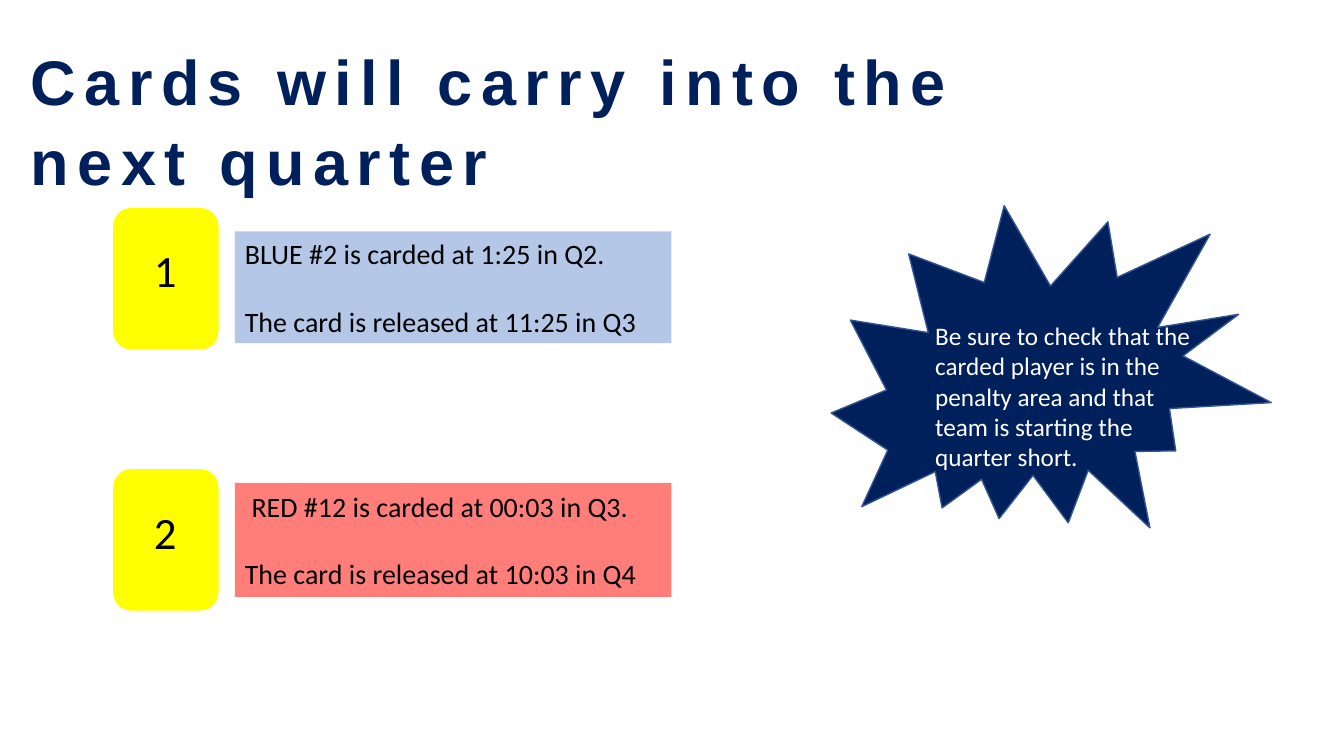
from pptx import Presentation
from pptx.dml.color import RGBColor
from pptx.enum.shapes import MSO_SHAPE
from pptx.enum.text import MSO_ANCHOR, PP_ALIGN
from pptx.util import Cm, Pt

ROUNDED, RECTANGLE = MSO_SHAPE.ROUNDED_RECTANGLE, MSO_SHAPE.RECTANGLE
BURST = MSO_SHAPE.EXPLOSION2
MIDDLE, LEFT = MSO_ANCHOR.MIDDLE, PP_ALIGN.LEFT
NAVY, YELLOW = "00205B", "FFFF00"


def add_filled(shapes, preset, box, fill, line=None):
    shape = shapes.add_shape(preset, *map(Cm, box))
    shape.shadow.inherit = False
    shape.fill.solid()
    shape.fill.fore_color.rgb = RGBColor.from_string(fill)
    if line:
        shape.line.color.rgb = RGBColor.from_string(line)
        shape.line.width = Pt(1)
    else:
        shape.line.fill.background()
    return shape


def write(shape, text, size, color="000000", font="Calibri", wrap=True):
    """Fill a shape with left-aligned text, one paragraph per line."""
    frame = shape.text_frame
    frame.text = text
    frame.word_wrap = wrap
    for paragraph in frame.paragraphs:
        paragraph.alignment = LEFT
        for run in paragraph.runs:
            run.font.size = Pt(size)
            run.font.name = font
            run.font.color.rgb = RGBColor.from_string(color)
    return frame


prs = Presentation()
prs.slide_width, prs.slide_height = Cm(33.87), Cm(19.05)
slide = prs.slides.add_slide(prs.slide_layouts[6])
shapes = slide.shapes

title = shapes.add_textbox(Cm(0.53), Cm(0.86), Cm(27.46), Cm(2.18))
heading = write(title, "Cards will carry into the next quarter", 45, NAVY, "Arial").paragraphs[0]
heading.line_spacing = 1.05
heading.runs[0].font.bold = True
heading.runs[0].font._element.set("spc", "600")

# number, card top, number top, note top, note height, note colour, first-line indent, note
examples = [
    ("1", 5.26, 5.99, 5.83, 2.82, "B4C7E7", 0,
     "BLUE #2 is carded at 1:25 in Q2.\nThe card is released at 11:25 in Q3"),
    ("2", 11.84, 12.6, 12.17, 2.87, "FF7E79", 0.17,
     "RED #12 is carded at 00:03 in Q3.\nThe card is released at 10:03 in Q4"),
]
for number, card_top, number_top, note_top, note_height, color, indent, note in examples:
    add_filled(shapes, ROUNDED, (2.87, card_top, 2.62, 3.53), YELLOW, YELLOW)
    label = shapes.add_textbox(Cm(3.63), Cm(number_top), Cm(1.07), Cm(1.63))
    write(label, number, 32, wrap=False)

    panel = add_filled(shapes, RECTANGLE, (5.92, note_top, 11, note_height), color)
    frame = write(panel, note, 20)
    frame.vertical_anchor = MIDDLE
    carded, released = frame.paragraphs
    if indent:
        carded._p.get_or_add_pPr().set("indent", str(Cm(indent)))
    released.space_before = Pt(24.4)

reminder = shapes.add_group_shape().shapes
burst = add_filled(reminder, BURST, (21.31, 4.5, 10.41, 10.08), NAVY, "325491")
burst.rotation = 26.7
advice = reminder.add_textbox(Cm(23.32), Cm(7.95), Cm(7.32), Cm(5.64))
write(advice, "Be sure to check that the carded player is in the penalty area "
      "and that team is starting the quarter short.", 18, "FFFFFF")

prs.save("out.pptx")
